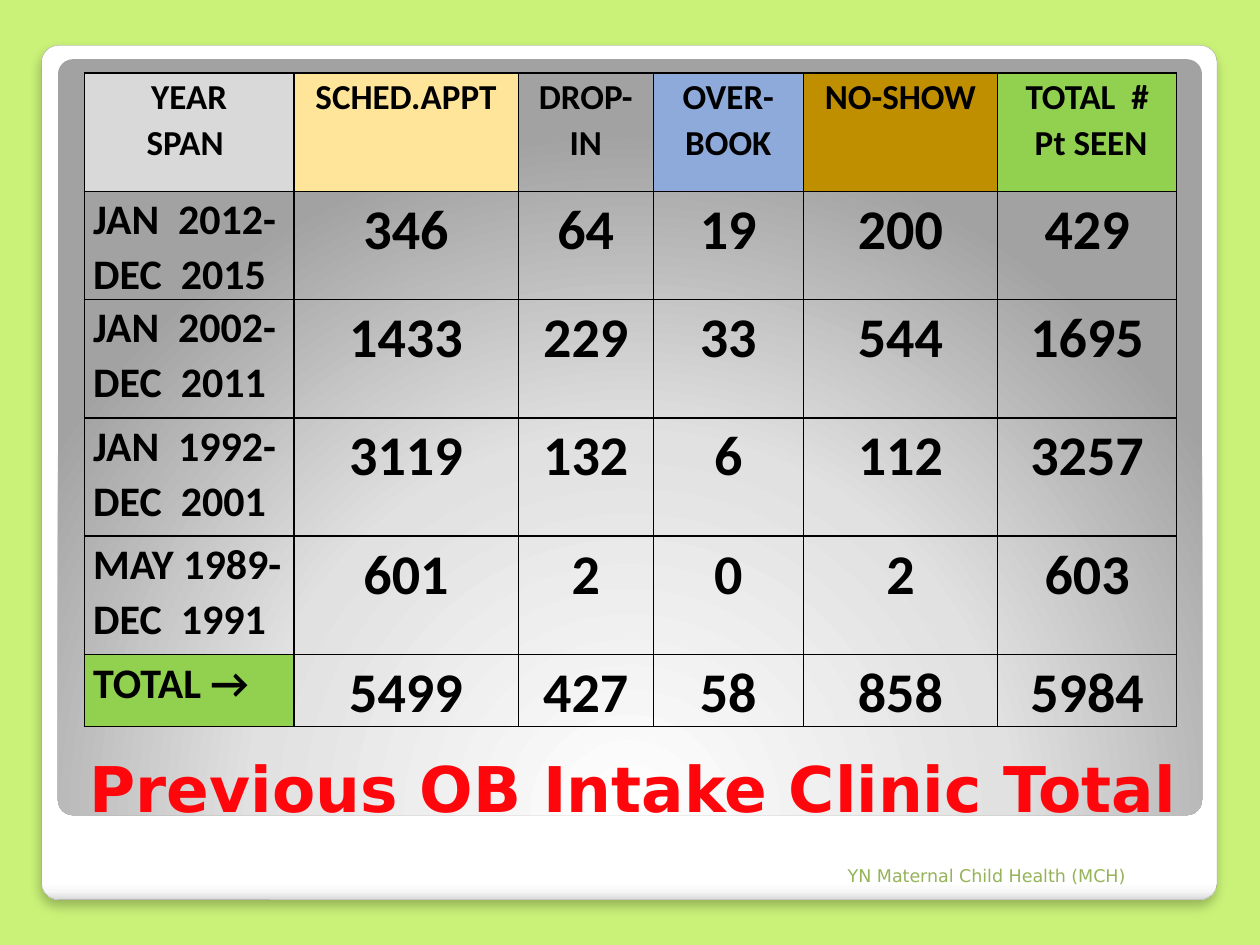
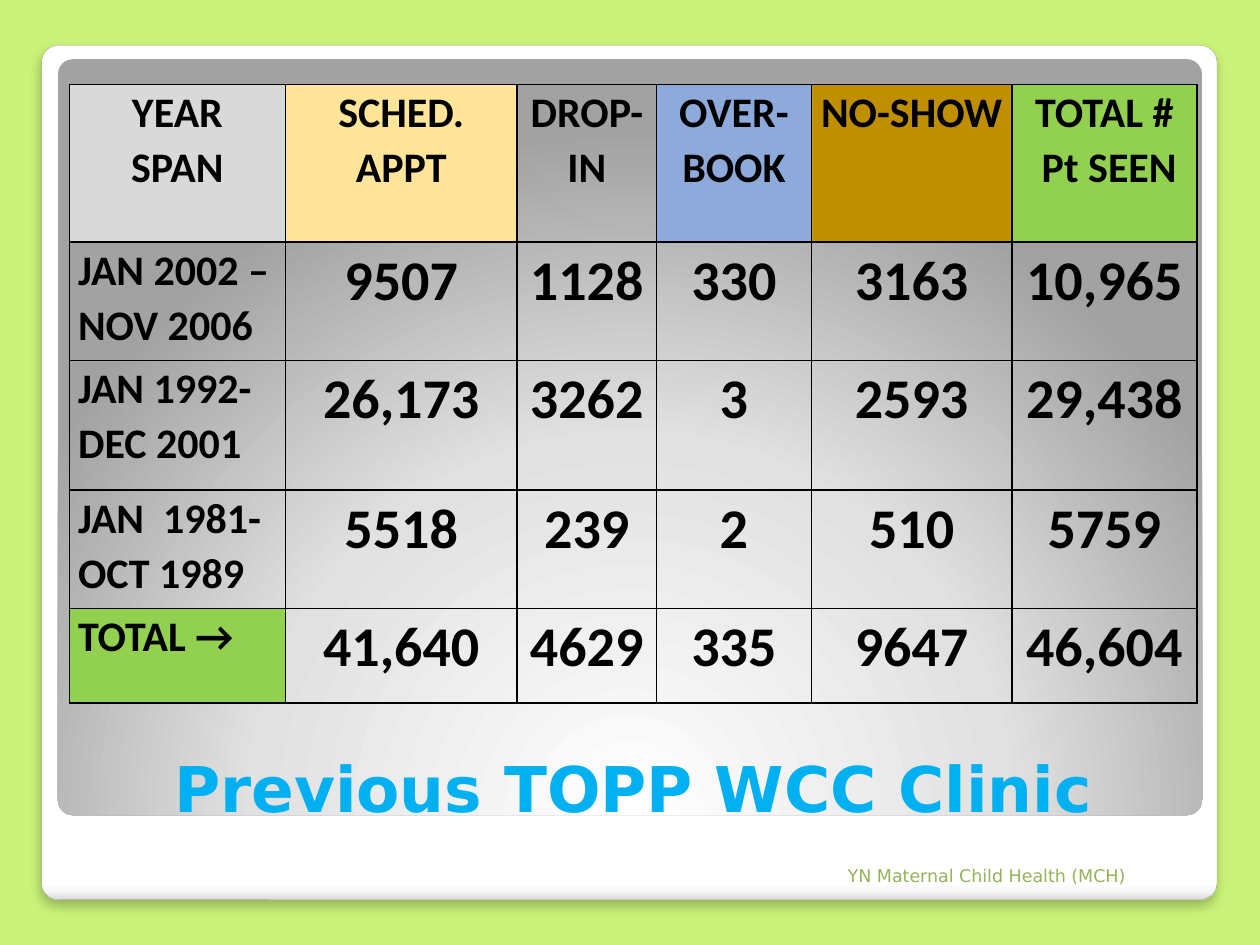
"""Build two slides of clinic totals, each a table over a headline on a framed card."""
import pptx
import pptx.dml.color
import pptx.enum.shapes
import pptx.enum.text
import pptx.oxml
import pptx.oxml.ns
import pptx.util

RGBColor = pptx.dml.color.RGBColor
Inches = pptx.util.Inches
Pt = pptx.util.Pt
ALIGN = pptx.enum.text.PP_ALIGN
ANCHOR = pptx.enum.text.MSO_ANCHOR

LIME = RGBColor(0xCA, 0xF2, 0x78)
BLACK = RGBColor(0x00, 0x00, 0x00)
FRAME_GRAY = RGBColor(0xA4, 0xA4, 0xA4)
RED = RGBColor(0xFE, 0x06, 0x0C)
SKY = RGBColor(0x00, 0xB0, 0xF0)
OLIVE = RGBColor(0x95, 0xB3, 0x59)
SILVER = RGBColor(0xD9, 0xD9, 0xD9)
CREAM = RGBColor(0xFF, 0xE5, 0x99)
BLUE = RGBColor(0x8E, 0xAA, 0xDB)
GOLD = RGBColor(0xBF, 0x8F, 0x00)
GREEN = RGBColor(0x92, 0xD0, 0x50)

TITLE_FONT = "DejaVu Sans"
TABLE_FONT = "Calibri"
FOOTER = "YN Maternal Child Health (MCH)"
TITLE_BOX = (0.55, 5.45, 8.95, 1.15)
FOOTER_BOX = (6.63, 6.68, 2.5, 0.4)
CARD_BOX = (0.33, 0.36, 9.33, 6.78)
PANEL_BOX = (0.46, 0.47, 9.08, 6)
CARD_STOPS = [(0, "FFFFFF"), (98, "FFFFFF"), (99, "F7F7F7"), (100, "DADADA")]
PANEL_STOPS = [(0, "FFFFFF"), (55, "E1E1E1"), (100, "A2A2A2")]
CARD_DIRECTION = '<a:lin ang="5400000" scaled="0"/>'
PANEL_DIRECTION = ('<a:path path="circle"><a:fillToRect l="50000" t="175000" '
                   'r="50000" b="-75000"/></a:path>')

HEADER_FILLS = [SILVER, CREAM, None, BLUE, GOLD, GREEN]
COLUMN_PARTS = [1.66, 1.78, 1.07, 1.19, 1.54, 1.42]
LABEL_SIZE, VALUE_SIZE = 24, 32

CLINICS = [
    {
        "title": "Previous OB Intake Clinic Total",
        "color": RED,
        "place": (0.67, 0.58, 8.67),
        "header_size": 20,
        "row_heights": [0.94, 0.85, 0.94, 0.94, 0.94, 0.55],
        "rows": [
            ["YEAR\nSPAN ", "SCHED.APPT", "DROP-IN", "OVER-BOOK", "NO-SHOW", "TOTAL  #\n Pt SEEN"],
            ["JAN  2012- DEC  2015", "346", "64", "19", "200", "429"],
            ["JAN  2002-\nDEC  2011", "1433", "229", "33", "544", "1695"],
            ["JAN  1992-\nDEC  2001", "3119", "132", "6", "112", "3257"],
            ["MAY 1989-\nDEC  1991", "601", "2", "0", "2", "603"],
            ["TOTAL →", "5499", "427", "58", "858", "5984"],
        ],
    },
    {
        "title": "Previous TOPP WCC Clinic",
        "color": SKY,
        "place": (0.55, 0.67, 8.95),
        "header_size": 24,
        "row_heights": [1.25, 0.94, 1.03, 0.94, 0.75],
        "rows": [
            ["YEAR\nSPAN", "SCHED.\nAPPT", "DROP-IN", "OVER-BOOK", "NO-SHOW", "TOTAL #\n Pt SEEN"],
            ["JAN 2002 – NOV 2006", "9507", "1128", "330", "3163", "10,965"],
            ["JAN 1992-\nDEC 2001", "26,173", "3262", "3", "2593", "29,438"],
            ["JAN  1981-\nOCT 1989", "5518", "239", "2", "510", "5759"],
            ["TOTAL →", "41,640", "4629", "335", "9647", "46,604"],
        ],
    },
]


def make_element(tag, inner, attributes=""):
    return pptx.oxml.parse_xml(
        f'<a:{tag} {pptx.oxml.ns.nsdecls("a")} {attributes}>{inner}</a:{tag}>')


def write_text(paragraph, text, font, size, color, bold):
    run = paragraph.add_run()
    run.text = text
    run.font.name = font
    run.font.size = Pt(size)
    run.font.color.rgb = color
    run.font.bold = bold


def add_rounded(slide, box, stops, direction):
    shape = slide.shapes.add_shape(
        pptx.enum.shapes.MSO_SHAPE.ROUNDED_RECTANGLE, *map(Inches, box))
    shape.adjustments[0] = 0.02
    shape.shadow.inherit = False
    shape.line.fill.background()
    shape.fill.gradient()
    gradient = shape.element.spPr.find(pptx.oxml.ns.qn("a:gradFill"))
    stop_list = "".join(f'<a:gs pos="{position * 1000}"><a:srgbClr val="{color}"/></a:gs>'
                        for position, color in stops)
    gradient.getparent().replace(gradient, make_element(
        "gradFill", f"<a:gsLst>{stop_list}</a:gsLst>{direction}", 'rotWithShape="1"'))
    return shape


def add_backdrop(slide):
    slide.background.fill.solid()
    slide.background.fill.fore_color.rgb = LIME
    card = add_rounded(slide, CARD_BOX, CARD_STOPS, CARD_DIRECTION)
    card.line.color.rgb = FRAME_GRAY
    card.line.width = Pt(0.16)
    effects = card.element.spPr.find(pptx.oxml.ns.qn("a:effectLst"))
    effects.append(make_element(
        "outerShdw", f'<a:srgbClr val="{BLACK}"><a:alpha val="25000"/></a:srgbClr>',
        f'blurRad="{Pt(6)}" dist="{Pt(4)}" dir="5400000" algn="t" rotWithShape="0"'))
    add_rounded(slide, PANEL_BOX, PANEL_STOPS, PANEL_DIRECTION)


def add_label(slide, box, text, size, color, bold, alignment):
    frame = slide.shapes.add_textbox(*map(Inches, box)).text_frame
    frame.word_wrap = True
    frame.vertical_anchor = ANCHOR.BOTTOM
    paragraph = frame.paragraphs[0]
    paragraph.alignment = alignment
    write_text(paragraph, text, TITLE_FONT, size, color, bold)


def fill_cell(cell, text, size, alignment, color):
    cell.margin_left = cell.margin_right = Inches(0.07)
    cell.margin_top = cell.margin_bottom = 0
    properties = cell._tc.get_or_add_tcPr()
    for side in ("lnL", "lnR", "lnT", "lnB"):
        properties.append(make_element(
            side, f'<a:solidFill><a:srgbClr val="{BLACK}"/></a:solidFill>', f'w="{Pt(1)}"'))
    if color is None:
        cell.fill.background()
    else:
        cell.fill.solid()
        cell.fill.fore_color.rgb = color
    frame = cell.text_frame
    for index, line in enumerate(text.split("\n")):
        paragraph = frame.add_paragraph() if index else frame.paragraphs[0]
        paragraph.alignment = alignment
        paragraph.line_spacing = 1.07
        write_text(paragraph, line, TABLE_FONT, size, BLACK, True)


def add_clinic_table(slide, clinic):
    rows, heights = clinic["rows"], clinic["row_heights"]
    left, top, width = clinic["place"]
    table = slide.shapes.add_table(
        len(rows), len(COLUMN_PARTS),
        *map(Inches, (left, top, width, sum(heights)))).table
    table.first_row = table.horz_banding = False
    for column, part in zip(table.columns, COLUMN_PARTS):
        column.width = Inches(width * part / sum(COLUMN_PARTS))
    for row, height in zip(table.rows, heights):
        row.height = Inches(height)
    for row_index, texts in enumerate(rows):
        for column_index, text in enumerate(texts):
            size, alignment, color = VALUE_SIZE, ALIGN.CENTER, None
            if row_index == 0:
                size, color = clinic["header_size"], HEADER_FILLS[column_index]
            elif column_index == 0:
                size, alignment = LABEL_SIZE, ALIGN.LEFT
                color = GREEN if row_index == len(rows) - 1 else None
            fill_cell(table.cell(row_index, column_index), text, size, alignment, color)


def main():
    presentation = pptx.Presentation()
    presentation.slide_width, presentation.slide_height = Inches(10), Inches(7.5)
    for clinic in CLINICS:
        slide = presentation.slides.add_slide(presentation.slide_layouts[6])
        add_backdrop(slide)
        add_label(slide, TITLE_BOX, clinic["title"], 36, clinic["color"], True, ALIGN.CENTER)
        add_label(slide, FOOTER_BOX, FOOTER, 10, OLIVE, False, ALIGN.LEFT)
        add_clinic_table(slide, clinic)
    presentation.save("out.pptx")


if __name__ == "__main__":
    main()
